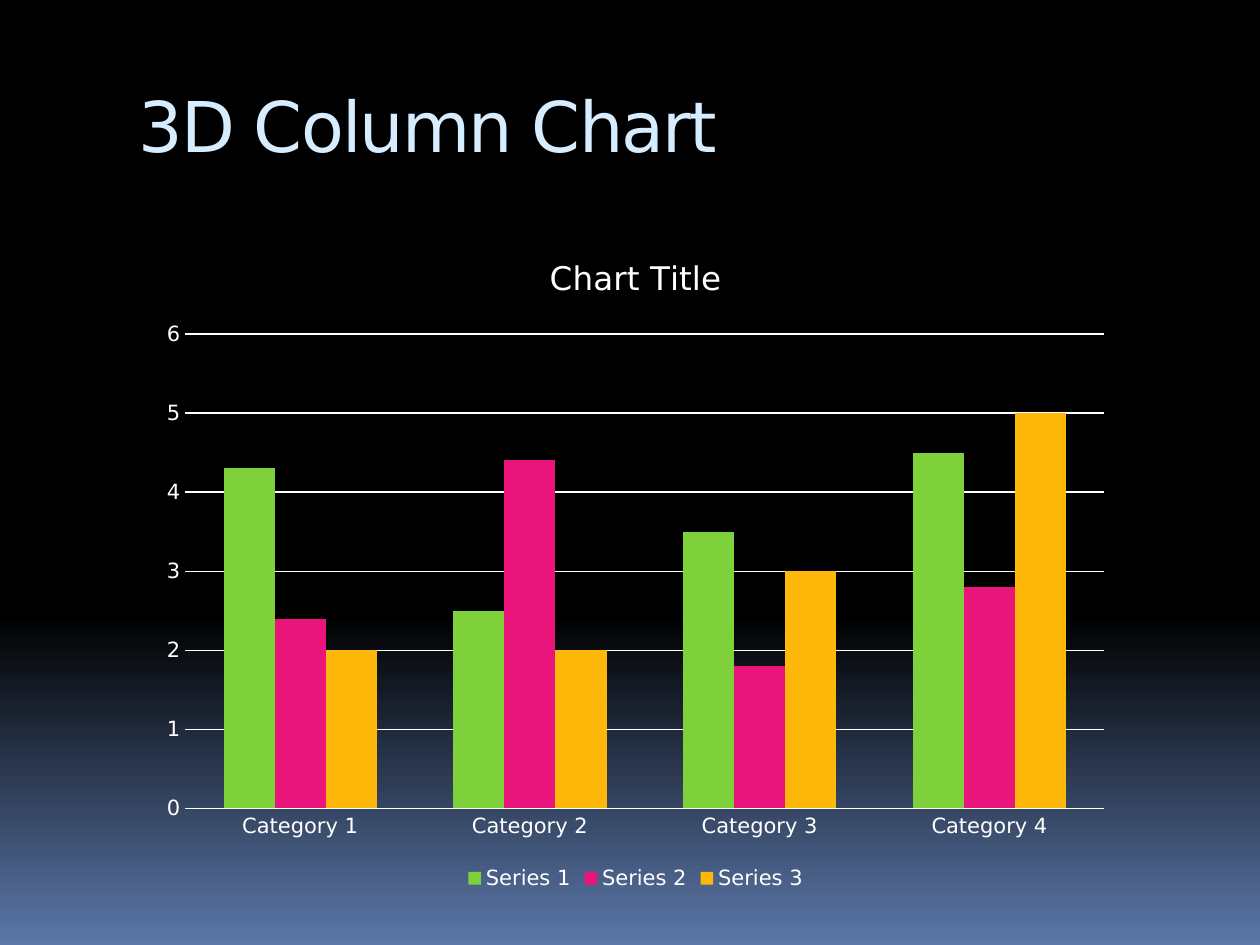
from copy import deepcopy
from dataclasses import dataclass

from pptx import Presentation
from pptx.chart.data import CategoryChartData
from pptx.dml.color import RGBColor
from pptx.enum.chart import XL_CHART_TYPE, XL_LEGEND_POSITION, XL_TICK_MARK
from pptx.enum.text import MSO_ANCHOR, PP_ALIGN
from pptx.oxml.ns import qn
from pptx.util import Inches, Pt

CLUSTERED = XL_CHART_TYPE.COLUMN_CLUSTERED
LEGEND_BOTTOM = XL_LEGEND_POSITION.BOTTOM
NO_TICK = XL_TICK_MARK.NONE
TOP = MSO_ANCHOR.TOP
LEFT = PP_ALIGN.LEFT
TITLE_ONLY = 5


@dataclass(frozen=True)
class Theme:
    font: str = "DejaVu Sans"
    heading: str = "D6ECFF"
    text: str = "FFFFFF"
    accents: tuple = ("7FD13B", "EA157A", "FEB80A")
    backdrop: tuple = ((0, "000000"), (0.65, "000000"), (1, "5B77A8"))
    heading_size: float = 40
    caption_size: float = 18.6
    label_size: float = 12
    base_size: float = 10
    grid_width: float = 0.75


class Deck:
    def __init__(self, theme):
        self.theme = theme
        self.presentation = Presentation()
        self.presentation.slide_width = Inches(10)
        self.presentation.slide_height = Inches(7.5)
        self.slide = self.presentation.slides.add_slide(
            self.presentation.slide_layouts[TITLE_ONLY])

    def area(self, left, top, width, height):
        across = self.presentation.slide_width
        down = self.presentation.slide_height
        return (round(left * across), round(top * down),
                round(width * across), round(height * down))

    def style(self, font, size, color):
        font.name = self.theme.font
        font.size = Pt(size)
        font.bold = False
        font.color.rgb = RGBColor.from_string(color)

    def backdrop(self):
        fill = self.slide.background.fill
        fill.gradient()
        fill.gradient_angle = 270
        first = next(self.slide.element.iter(qn("a:gs")))
        first.addnext(deepcopy(first))
        for stop, (position, color) in zip(fill.gradient_stops, self.theme.backdrop):
            stop.position = position
            stop.color.rgb = RGBColor.from_string(color)

    def title(self, wording, area):
        heading = self.slide.shapes.title
        heading.left, heading.top, heading.width, heading.height = self.area(*area)
        frame = heading.text_frame
        frame.vertical_anchor = TOP
        frame.margin_top = Inches(0.09)
        paragraph = frame.paragraphs[0]
        paragraph.alignment = LEFT
        run = paragraph.add_run()
        run.text = wording
        self.style(run.font, self.theme.heading_size, self.theme.heading)
        run.font._element.set("spc", "-100")

    def axis(self, axis):
        axis.major_tick_mark = axis.minor_tick_mark = NO_TICK
        axis.format.line.fill.background()
        self.style(axis.tick_labels.font, self.theme.label_size, self.theme.text)

    def columns(self, caption, categories, series, area):
        theme = self.theme
        figures = CategoryChartData(number_format="General")
        figures.categories = categories
        for name, values in series.items():
            figures.add_series(name, values)
        chart = self.slide.shapes.add_chart(CLUSTERED, *self.area(*area), figures).chart
        self.style(chart.font, theme.base_size, theme.text)

        chart.has_title = True
        chart.chart_title.include_in_layout = False
        run = chart.chart_title.text_frame.paragraphs[0].add_run()
        run.text = caption
        self.style(run.font, theme.caption_size, theme.text)

        chart.has_legend = True
        chart.legend.position = LEGEND_BOTTOM
        chart.legend.include_in_layout = False
        self.style(chart.legend.font, theme.label_size, theme.text)

        self.axis(chart.category_axis)
        self.axis(chart.value_axis)
        chart.value_axis.has_major_gridlines = True
        grid = chart.value_axis.major_gridlines.format.line
        grid.color.rgb = RGBColor.from_string(theme.text)
        grid.width = Pt(theme.grid_width)

        plot = chart.plots[0]
        plot.gap_width = 150
        plot.overlap = 0
        plot.vary_by_categories = False
        for bars, color in zip(plot.series, theme.accents):
            bars.format.fill.solid()
            bars.format.fill.fore_color.rgb = RGBColor.from_string(color)


def main():
    deck = Deck(Theme())
    deck.backdrop()
    deck.title("3D Column Chart", (0.1, 0.075, 0.85, 0.13))
    deck.columns(
        "Chart Title",
        [f"Category {number}" for number in range(1, 5)],
        {
            "Series 1": (4.3, 2.5, 3.5, 4.5),
            "Series 2": (2.4, 4.4, 1.8, 2.8),
            "Series 3": (2, 2, 3, 5),
        },
        (0.117, 0.244, 0.775, 0.704),
    )
    deck.presentation.save("out.pptx")


if __name__ == "__main__":
    main()
